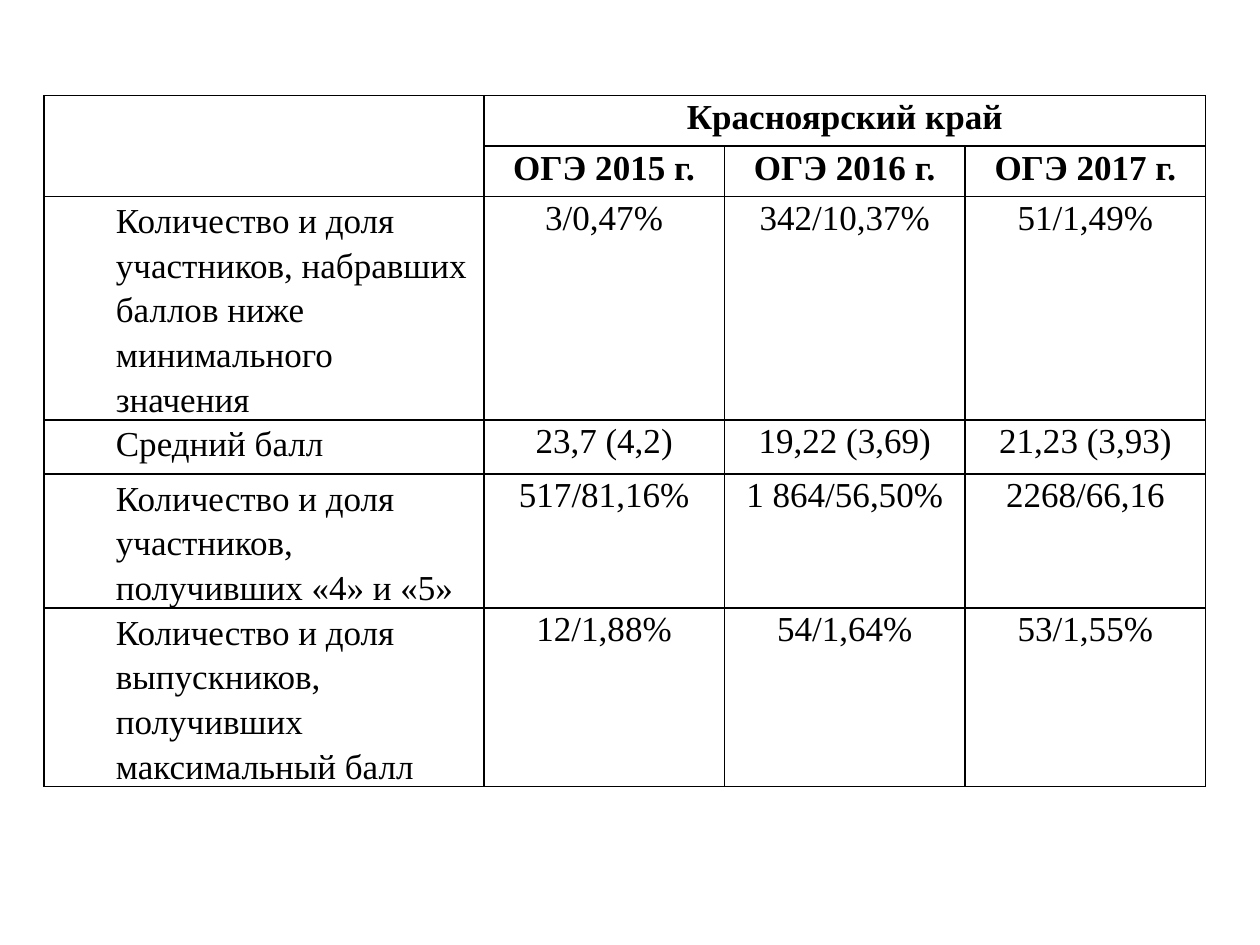
from lxml import etree
from pptx import Presentation
from pptx.dml.color import RGBColor
from pptx.enum.text import PP_ALIGN
from pptx.oxml.ns import qn
from pptx.util import Inches, Pt

CENTER, LEFT = PP_ALIGN.CENTER, PP_ALIGN.LEFT
BLACK = RGBColor(0, 0, 0)
FONT = "Times New Roman"
HEADER_ROWS = 2

COLUMNS = [3.49] + [1.91] * 3
ROWS = [0.4, 0.4, 1.27, 0.43, 0.95, 1.29]
RESULTS = [
    ["", "Красноярский край", "", ""],
    ["", "ОГЭ 2015 г.", "ОГЭ 2016 г.", "ОГЭ 2017 г."],
    ["Количество и доля участников, набравших баллов ниже минимального значения",
     "3/0,47%", "342/10,37%", "51/1,49%"],
    ["Средний балл", "23,7 (4,2)", "19,22 (3,69)", "21,23 (3,93)"],
    ["Количество и доля участников, получивших «4» и «5»",
     "517/81,16%", "1 864/56,50%", "2268/66,16"],
    ["Количество и доля выпускников, получивших максимальный балл",
     "12/1,88%", "54/1,64%", "53/1,55%"],
]


def add_borders(cell):
    """Draw a 1 pt line on each side; borders precede the fill in tcPr."""
    properties = cell._tc.get_or_add_tcPr()
    for position, side in enumerate(("a:lnL", "a:lnR", "a:lnT", "a:lnB")):
        line = etree.Element(qn(side), w=str(Pt(1)))
        fill = etree.SubElement(line, qn("a:solidFill"))
        etree.SubElement(fill, qn("a:srgbClr"), val=str(BLACK))
        properties.insert(position, line)


prs = Presentation()
prs.slide_width, prs.slide_height = Inches(10), Inches(7.5)
slide = prs.slides.add_slide(prs.slide_layouts[6])

# Table grid
results = slide.shapes.add_table(
    len(ROWS), len(COLUMNS), Inches(0.35), Inches(0.76),
    Inches(sum(COLUMNS)), Inches(sum(ROWS))).table
results.first_row = results.horz_banding = False
for column, width in zip(results.columns, COLUMNS):
    column.width = Inches(width)
for row, height in zip(results.rows, ROWS):
    row.height = Inches(height)

# Merged headings: empty corner and region
results.cell(0, 0).merge(results.cell(1, 0))
results.cell(0, 1).merge(results.cell(0, 3))

# Cell contents
for r, values in enumerate(RESULTS):
    for c, value in enumerate(values):
        cell = results.cell(r, c)
        cell.fill.background()
        add_borders(cell)
        cell.margin_left = cell.margin_right = Inches(0.07)
        cell.margin_top = cell.margin_bottom = 0
        if not value:
            continue
        paragraph = cell.text_frame.paragraphs[0]
        if c == 0:
            paragraph.alignment, paragraph.line_spacing = LEFT, 1.15
            paragraph._p.get_or_add_pPr().set("marL", str(Inches(0.5)))
        else:
            paragraph.alignment, paragraph.line_spacing = CENTER, 1.07
        run = paragraph.add_run()
        run.text = value
        run.font.name, run.font.size = FONT, Pt(20)
        run.font.bold = r < HEADER_ROWS
        run.font.color.rgb = BLACK

prs.save("out.pptx")
